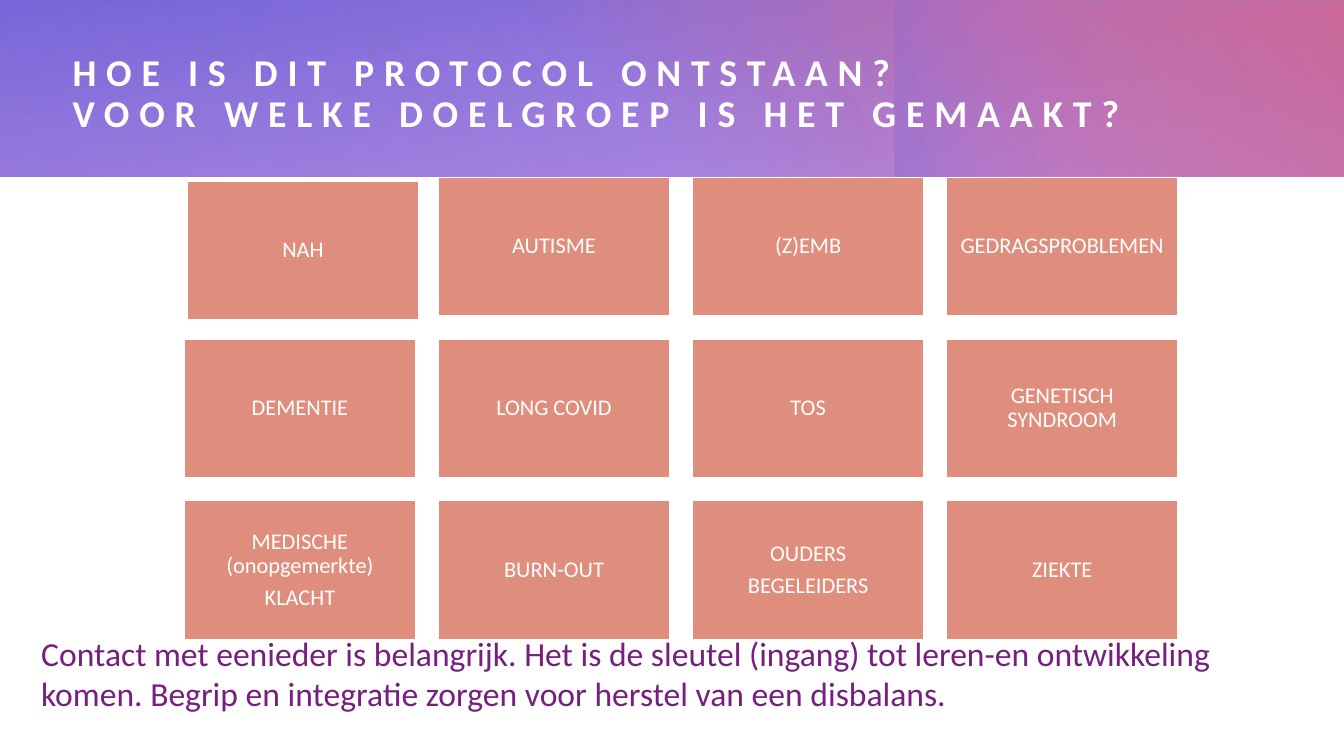
from lxml.etree import SubElement
from pptx import Presentation
from pptx.dml.color import RGBColor
from pptx.enum.shapes import MSO_SHAPE
from pptx.enum.text import MSO_ANCHOR, PP_ALIGN
from pptx.oxml.ns import qn
from pptx.util import Inches, Pt

WIDTH, HEIGHT = 13.33, 7.5
BANNER_HEIGHT = 1.75
GRID_LEFT, GRID_TOP = 1.83, 1.76
CARD_WIDTH, GAP = 2.29, 0.23
CARD_HEIGHT = 0.6 * CARD_WIDTH
FIRST_CARD_SHIFT = (0.03, 0.04)

# Box in inches, rotation, gradient angle, stops as (position, colour, opacity in percent)
BANNER_LAYERS = [
    ((0, 0, WIDTH, BANNER_HEIGHT), 0, 260, [(0, "AF7EDF", 83), (100, "6B61D8", 100)]),
    ((4.81, 0.01, 8.52, 1.74), 0, 310, [(22, "D8617E", 0), (99, "D8617E", 100)]),
    ((9.87, -0.99, BANNER_HEIGHT, 3.74), 270, 250, [(45, "CE61D8", 0), (99, "6B61D8", 33)]),
    ((2.68, 0, 10.64, BANNER_HEIGHT), 180, 330, [(0, "AF7EDF", 30), (99, "AF7EDF", 0)]),
    ((0, 0, 8.65, BANNER_HEIGHT), 0, 340, [(0, "AF7EDF", 21), (99, "AF7EDF", 0)]),
]

TARGET_GROUPS = [
    ["NAH", "AUTISME", "(Z)EMB", "GEDRAGSPROBLEMEN"],
    ["DEMENTIE", "LONG COVID", "TOS", "GENETISCH\vSYNDROOM"],
    ["MEDISCHE (onopgemerkte)\nKLACHT", "BURN-OUT", "OUDERS\nBEGELEIDERS", "ZIEKTE"],
]


def colour(value):
    return RGBColor.from_string(value)


class SlideBuilder:
    font_name = "Calibri"
    light = "FFFFFF"
    accent = "761F7E"
    card_fill = "DF8E7E"

    def __init__(self, slide):
        self.slide = slide

    def rectangle(self, box):
        shape = self.slide.shapes.add_shape(MSO_SHAPE.RECTANGLE, *map(Inches, box))
        shape.shadow.inherit = False
        return shape

    def gradient_layer(self, box, rotation, angle, stops):
        shape = self.rectangle(box)
        shape.rotation = rotation
        shape.line.fill.background()
        shape.fill.gradient()
        gradient = shape.element.spPr.find(qn("a:gradFill"))
        stop_list = gradient.find(qn("a:gsLst"))
        for stop in list(stop_list):
            stop_list.remove(stop)
        for position, value, opacity in stops:
            stop = SubElement(stop_list, qn("a:gs"), pos=str(position * 1000))
            stop_colour = SubElement(stop, qn("a:srgbClr"), val=value)
            SubElement(stop_colour, qn("a:alpha"), val=str(opacity * 1000))
        gradient.find(qn("a:lin")).set("ang", str(angle * 60000))

    def set_text(self, shape, text, size, value, inset=None, bold=False,
                 align=PP_ALIGN.LEFT, anchor=MSO_ANCHOR.TOP, line_spacing=1.0, space_after=0):
        frame = shape.text_frame
        frame.word_wrap = True
        frame.vertical_anchor = anchor
        if inset is not None:
            frame.margin_left = frame.margin_right = Inches(inset)
            frame.margin_top = frame.margin_bottom = Inches(inset)
        frame.text = text
        for paragraph in frame.paragraphs:
            paragraph.alignment = align
            paragraph.line_spacing = line_spacing
            paragraph.space_after = Pt(space_after)
            paragraph.font.name = self.font_name
            paragraph.font.size = Pt(size)
            paragraph.font.bold = bold
            paragraph.font.color.rgb = colour(value)

    def title(self, box, text):
        shape = self.slide.shapes.add_textbox(*map(Inches, box))
        self.set_text(shape, text, 27, self.light, inset=0, bold=True,
                      anchor=MSO_ANCHOR.MIDDLE, line_spacing=0.9)
        for properties in shape.element.iter(qn("a:r")):
            properties.get_or_add_rPr().set("spc", "700")

    def card(self, column, row, text, shift=(0, 0)):
        left = GRID_LEFT + column * (CARD_WIDTH + GAP) + shift[0]
        top = GRID_TOP + row * (CARD_HEIGHT + GAP) + shift[1]
        shape = self.rectangle((left, top, CARD_WIDTH, CARD_HEIGHT))
        shape.fill.solid()
        shape.fill.fore_color.rgb = colour(self.card_fill)
        shape.line.color.rgb = colour(self.light)
        shape.line.width = Pt(1)
        self.set_text(shape, text, 16, self.light, inset=0.07, align=PP_ALIGN.CENTER,
                      anchor=MSO_ANCHOR.MIDDLE, line_spacing=0.9, space_after=5.6)

    def closing_text(self, box, text):
        shape = self.slide.shapes.add_textbox(*map(Inches, box))
        self.set_text(shape, text, 24, self.accent, space_after=6)


def main():
    presentation = Presentation()
    presentation.slide_width = Inches(WIDTH)
    presentation.slide_height = Inches(HEIGHT)
    builder = SlideBuilder(presentation.slides.add_slide(presentation.slide_layouts[6]))

    for layer in BANNER_LAYERS:
        builder.gradient_layer(*layer)
    builder.title((0.72, 0.41, 11.89, 1.06),
                  "HOE IS DIT PROTOCOL ONTSTAAN?\vVOOR WELKE DOELGROEP IS HET GEMAAKT?")
    for row, names in enumerate(TARGET_GROUPS):
        for column, name in enumerate(names):
            shift = FIRST_CARD_SHIFT if row == column == 0 else (0, 0)
            builder.card(column, row, name, shift)
    builder.closing_text(
        (0.31, 6.23, 12.6, 0.91),
        "Contact met eenieder is belangrijk. Het is de sleutel (ingang) tot leren-en "
        "ontwikkeling komen. Begrip en integratie zorgen voor herstel van een disbalans.")
    presentation.save("out.pptx")


if __name__ == "__main__":
    main()
